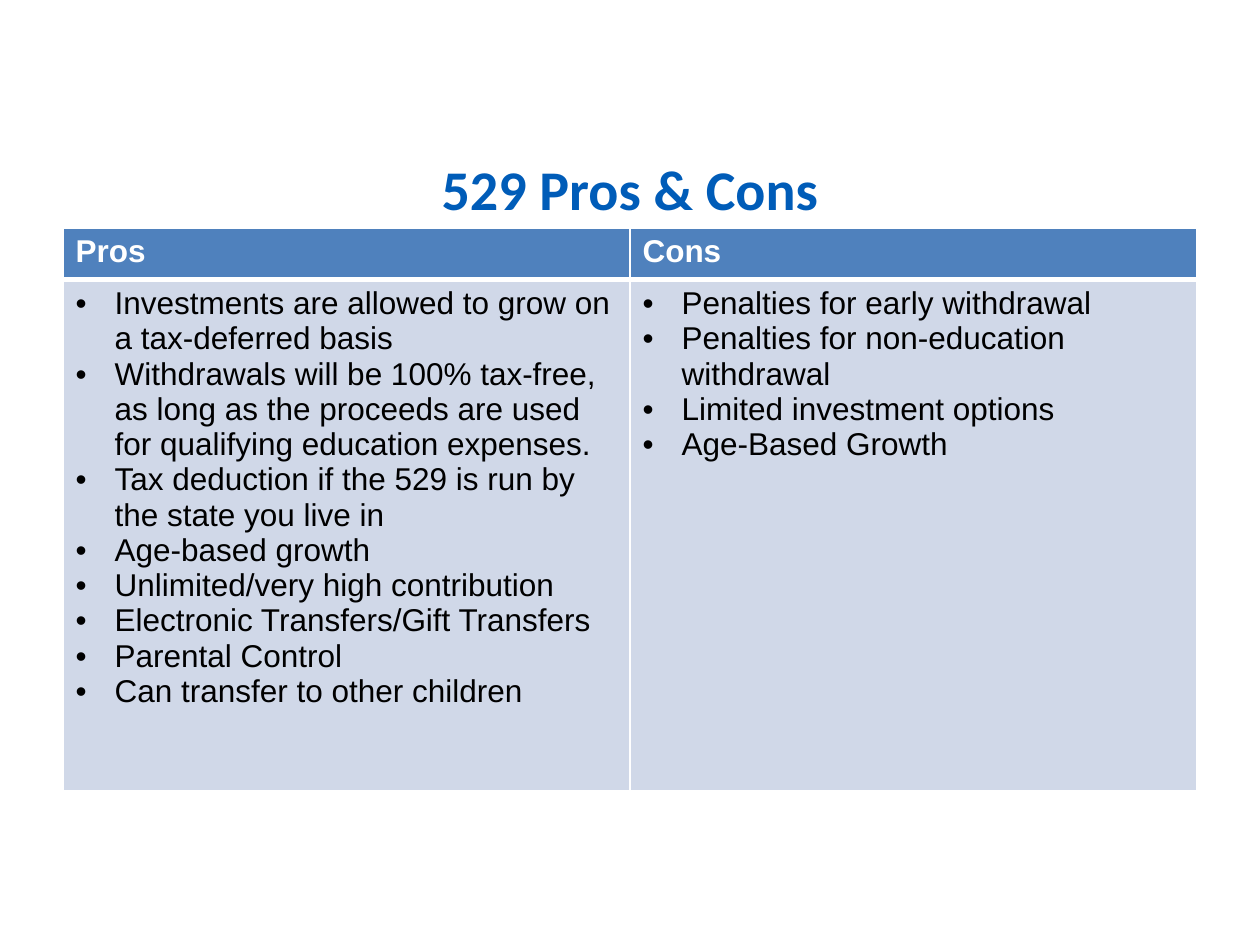
from lxml.etree import SubElement
from pptx import Presentation
from pptx.dml.color import RGBColor
from pptx.enum.text import MSO_ANCHOR, PP_ALIGN
from pptx.oxml.ns import qn
from pptx.util import Inches, Pt

COLORS = {
    "title": "005CB8",
    "header": "4F81BD",
    "body": "D0D8E8",
    "white": "FFFFFF",
    "black": "000000",
}
PROS = [
    "Investments are allowed to grow on a tax-deferred basis",
    "Withdrawals will be 100% tax-free, as long as the proceeds are used for qualifying education expenses.",
    "Tax deduction if the 529 is run by the state you live in",
    "Age-based growth",
    "Unlimited/very high contribution",
    "Electronic Transfers/Gift Transfers",
    "Parental Control",
    "Can transfer to other children",
]
CONS = [
    "Penalties for early withdrawal",
    "Penalties for non-education withdrawal",
    "Limited investment options",
    "Age-Based Growth",
]


def add_run(paragraph, text, font, size, color, bold):
    run = paragraph.add_run()
    run.text = text
    run.font.name = font
    run.font.size = Pt(size)
    run.font.bold = bold
    run.font.color.rgb = RGBColor.from_string(COLORS[color])


def style_cell(cell, fill, widths):
    properties = cell._tc.get_or_add_tcPr()
    for side, width in widths.items():
        border = SubElement(properties, qn(f"a:ln{side}"), w=str(Pt(width)))
        solid = SubElement(border, qn("a:solidFill"))
        SubElement(solid, qn("a:srgbClr"), val=COLORS["white"])
    cell.fill.solid()
    cell.fill.fore_color.rgb = RGBColor.from_string(COLORS[fill])


prs = Presentation()
prs.slide_width = Inches(10)
prs.slide_height = Inches(7.5)
slide = prs.slides.add_slide(prs.slide_layouts[6])

title = slide.shapes.add_textbox(Inches(0.5), Inches(1), Inches(9), Inches(0.72)).text_frame
title.word_wrap = True
title.vertical_anchor = MSO_ANCHOR.MIDDLE
heading = title.paragraphs[0]
heading.alignment = PP_ALIGN.CENTER
heading.line_spacing = Pt(57)
add_run(heading, "529 Pros & Cons", "Calibri", 32, "title", True)

comparison = slide.shapes.add_table(2, 2, Inches(0.5), Inches(1.81), Inches(9), Inches(4.47)).table
comparison.rows[0].height = Inches(0.41)
comparison.rows[1].height = Inches(4.06)

for column, (label, points) in enumerate([("Pros", PROS), ("Cons", CONS)]):
    header = comparison.cell(0, column)
    style_cell(header, "header", {"L": 1, "R": 1, "T": 1, "B": 3})
    add_run(header.text_frame.paragraphs[0], label, "Arial", 18, "white", True)

    body = comparison.cell(1, column)
    style_cell(body, "body", {"L": 1, "R": 1, "T": 3, "B": 1})
    for index, point in enumerate(points):
        frame = body.text_frame
        item = frame.add_paragraph() if index else frame.paragraphs[0]
        layout = item._p.get_or_add_pPr()
        layout.set("marL", str(Inches(0.31)))
        layout.set("indent", str(Inches(-0.31)))
        SubElement(layout, qn("a:buFont"), typeface="Arial")
        SubElement(layout, qn("a:buChar"), char="•")
        add_run(item, point, "Arial", 18, "black", False)

prs.save("out.pptx")
